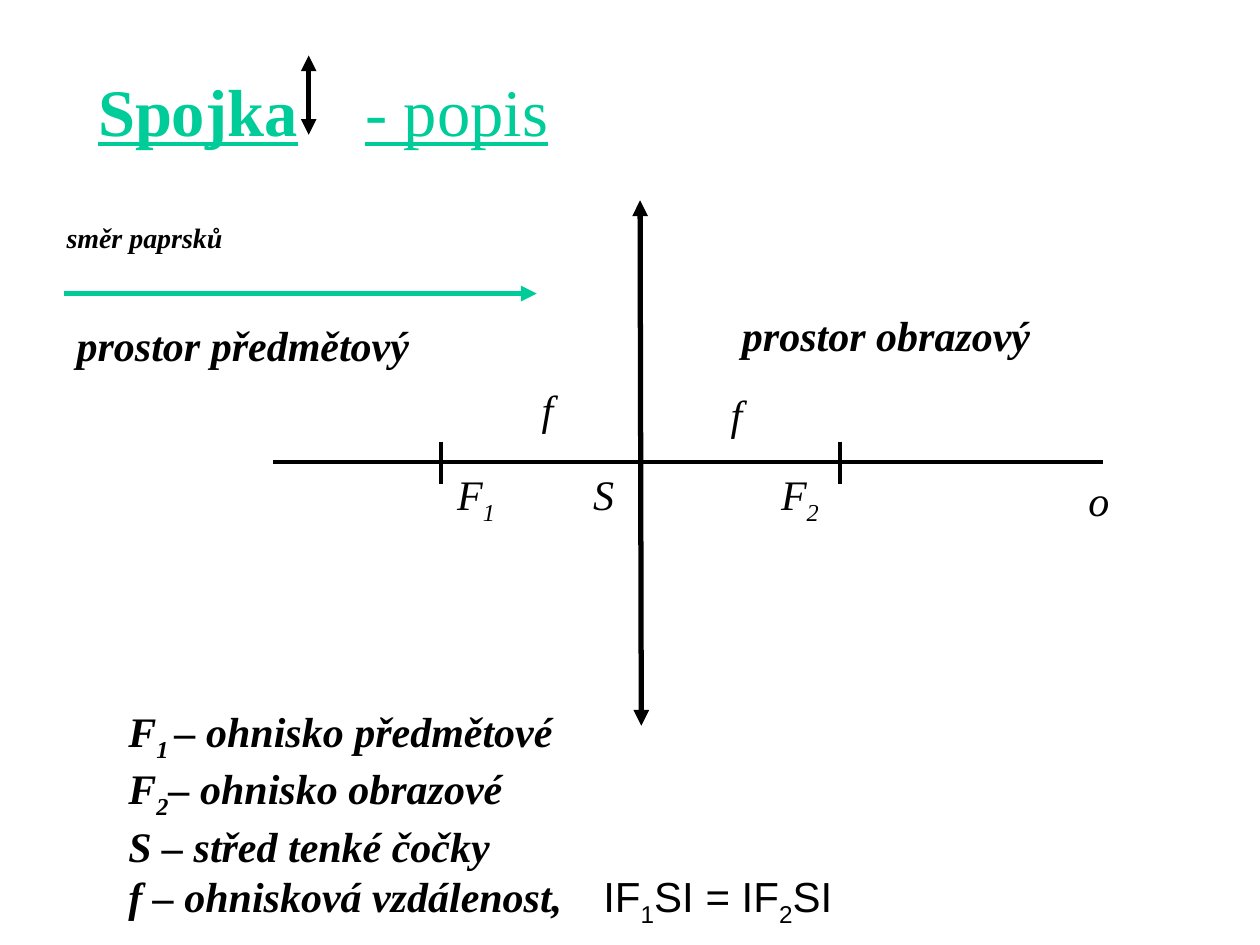
from lxml.etree import SubElement
from pptx import Presentation
from pptx.dml.color import RGBColor
from pptx.enum.shapes import MSO_CONNECTOR
from pptx.enum.text import MSO_ANCHOR
from pptx.oxml.ns import qn
from pptx.util import Inches, Pt

BLACK, GREEN = "000000", "00CC99"
SERIF, SANS = "Times New Roman", "Arial"

deck = Presentation()
deck.slide_width, deck.slide_height = Inches(10), Inches(7.5)
page = deck.slides.add_slide(deck.slide_layouts[6])


def add_text(place, lines, size=24, bold=False, italic=True, color=BLACK, tab=None):
    """Write lines of text; "_" switches subscript on and off, "|" starts plain text at the tab stop."""
    box = page.shapes.add_textbox(*(Inches(length) for length in place))
    frame = box.text_frame
    frame.word_wrap = True
    for index, line in enumerate(lines):
        para = frame.paragraphs[0] if index == 0 else frame.add_paragraph()
        for part, content in enumerate(line.split("|")):
            plain = part == 1
            if plain:
                stops = SubElement(para._p.get_or_add_pPr(), qn("a:tabLst"))
                SubElement(stops, qn("a:tab"), pos=str(Inches(tab)), algn="l")
                content = "\t" + content
            for order, piece in enumerate(content.split("_")):
                span = para.add_run()
                span.text = piece
                font = span.font
                font.size = Pt(size)
                font.name = SANS if plain and italic else SERIF
                font.bold = bold and not plain
                font.italic = italic and not plain
                font.color.rgb = RGBColor.from_string(color)
                if order % 2:
                    font._element.set("baseline", "-25000")
    return box


def add_line(start, end, width=2.25, color=BLACK, arrows=()):
    """Draw a line; arrows lists the ends with a head, in the order headEnd, tailEnd."""
    line = page.shapes.add_connector(
        MSO_CONNECTOR.STRAIGHT, *(Inches(length) for length in start + end))
    line.line.width = Pt(width)
    line.line.color.rgb = RGBColor.from_string(color)
    for arrow in arrows:
        SubElement(line.line._get_or_add_ln(), qn(f"a:{arrow}"), type="triangle")
    SubElement(line._element.spPr, qn("a:effectLst"))


# Title with the lens symbol
title = add_text((0.68, 0.44, 8.5, 0.87), ["Spojka|- popis"], size=38, bold=True,
                 italic=False, color=GREEN, tab=2.12)
title.text_frame.vertical_anchor = MSO_ANCHOR.MIDDLE
for span in title.text_frame.paragraphs[0].runs:
    span.font.underline = True
both_ends = ("headEnd", "tailEnd")
add_line((2.45, 0.44), (2.45, 1.07), 3, arrows=both_ends)

# Optical axis, foci, lens and direction of the rays
axis_y = 3.67
add_line((2.17, axis_y), (8.75, axis_y))
for focus_x in (3.5, 6.67):
    add_line((focus_x, 3.51), (focus_x, 3.84))
add_line((5.08, 1.59), (5.09, 5.76), 3, arrows=both_ends)
add_line((0.51, 2.33), (4.26, 2.33), 3, GREEN, arrows=("tailEnd",))

# Labels in the diagram
for place, label in [
    ((3.53, axis_y, 0.84, 0.51), "F_1"),
    ((6.1, axis_y, 0.79, 0.51), "F_2"),
    ((4.61, axis_y, 0.65, 0.5), "S"),
    ((8.54, 3.75, 0.39, 0.48), "o"),
    ((4.2, 3.02, 0.47, 0.48), "f"),
    ((5.7, 3.06, 0.47, 0.48), "f"),
]:
    box = add_text(place, [label])
    if label in ("o", "f"):
        box.text_frame.paragraphs[0].line_spacing = 0.95

add_text((0.43, 1.7, 3.62, 0.37), ["směr paprsků"], size=16, bold=True)
add_text((0.51, 2.49, 3.04, 0.5), ["prostor předmětový"], bold=True)
add_text((5.79, 2.41, 3.62, 0.5), ["prostor obrazový"], bold=True)

# Legend
add_text((0.92, 5.55, 5.88, 1.72), [
    "F_1 _– ohnisko předmětové",
    "F_2_– ohnisko obrazové",
    "S – střed tenké čočky",
    "f – ohnisková vzdálenost,|IF_1_SI = IF_2_SI",
], bold=True, tab=3.77)

deck.save("out.pptx")
